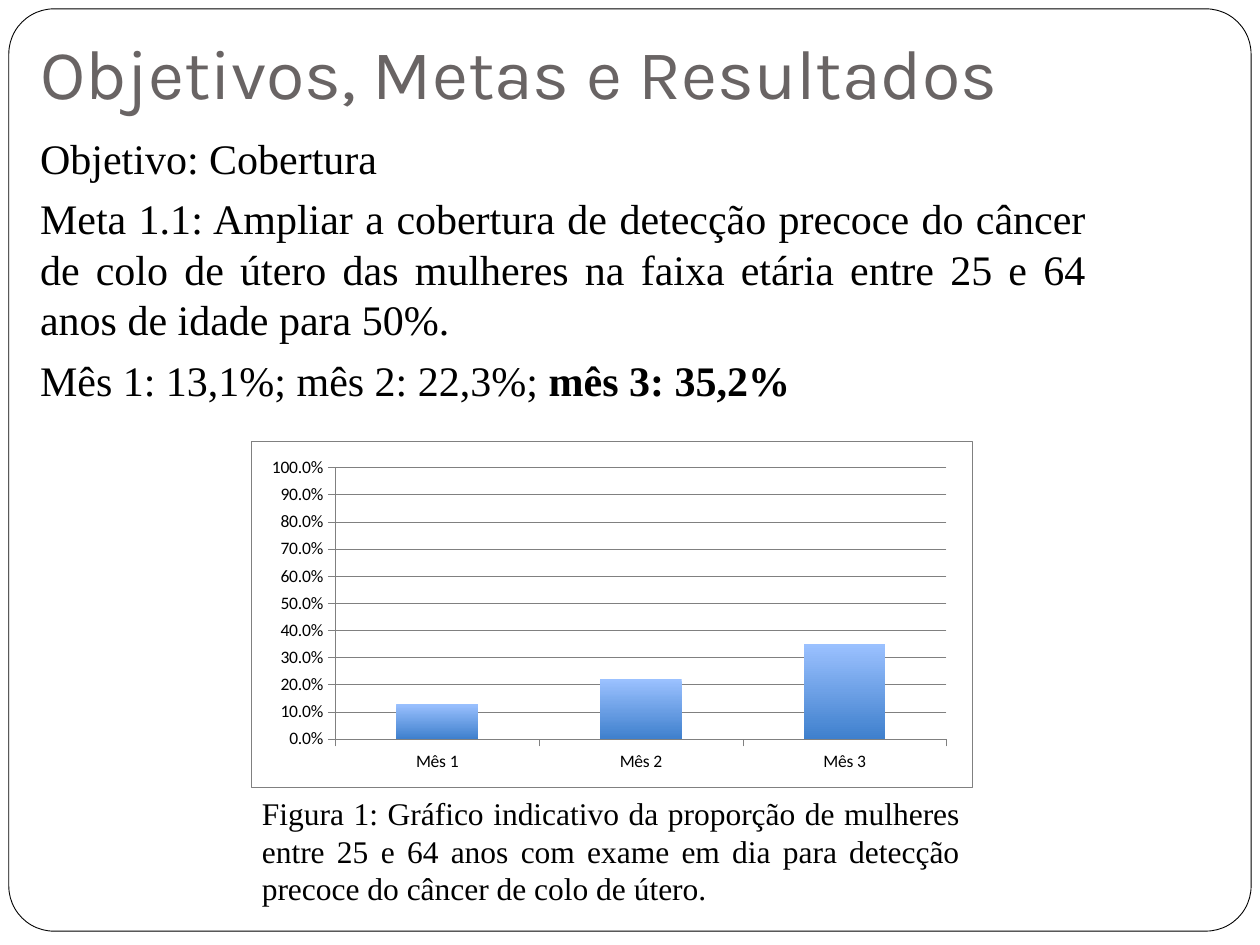
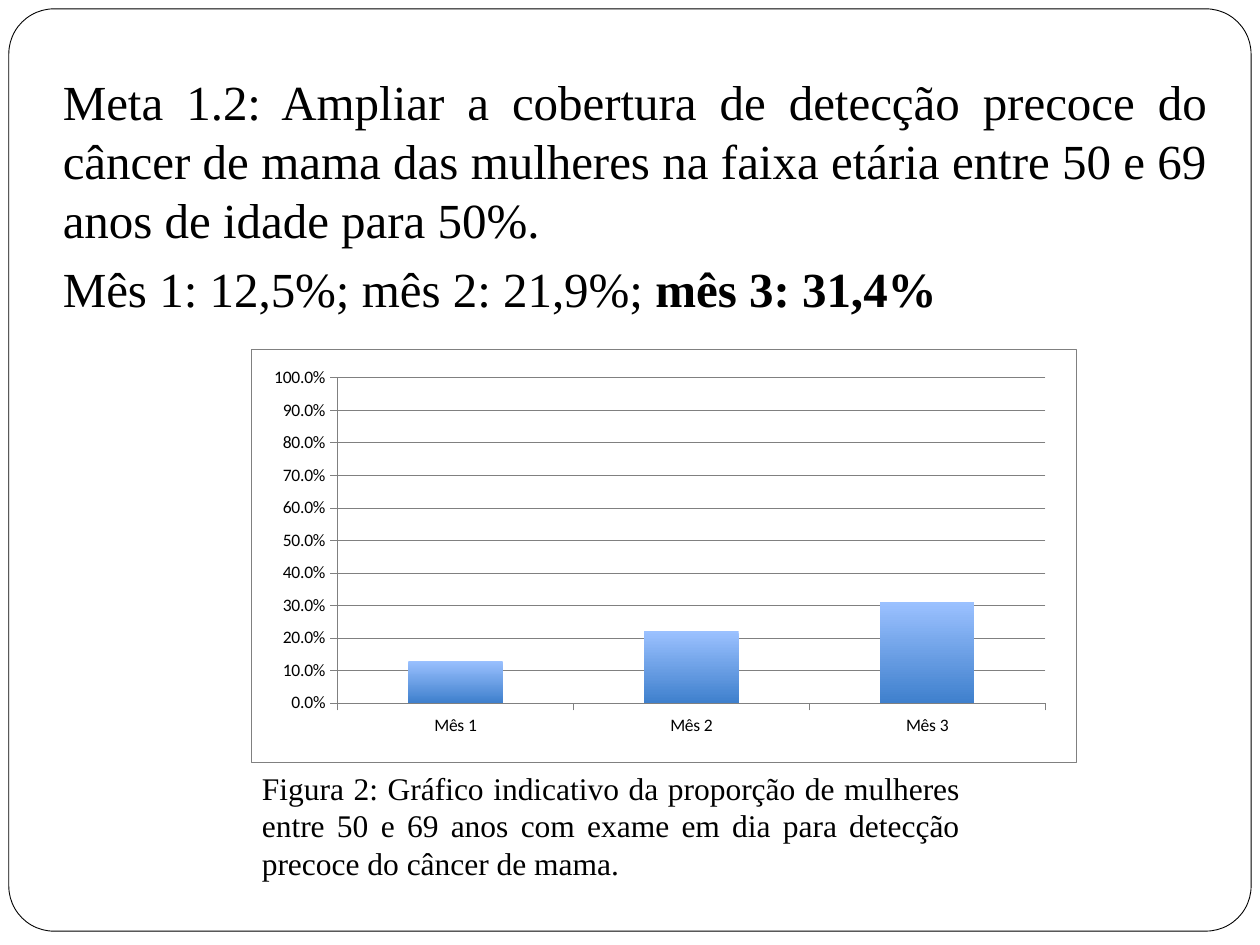
from dataclasses import dataclass
from lxml import etree
from pptx import Presentation
from pptx import util as u
from pptx.chart import data as chart_data
from pptx.dml.color import RGBColor
from pptx.enum import chart as charts, shapes, text
from pptx.oxml import parse_xml
from pptx.oxml.ns import nsdecls, qn


@dataclass(frozen=True)
class Theme:
    paper: str = "FFFFFF"
    ink: str = "000000"
    heading: str = "696464"
    rule: str = "808080"
    bar_top: str = "9BC1FF"
    bar_bottom: str = "3F80CD"
    title_font: str = "Karla"
    body_font: str = "Times New Roman"
    chart_font: str = "Calibri"
    title_size: float = 40
    goal_size: float = 24
    large_goal_size: float = 28
    caption_size: float = 18
    chart_size: float = 10
    goal_gap: float = 5.8
    hairline: float = 0.25
    frame_line: float = 0.5


MONTHS = ["Mês 1", "Mês 2", "Mês 3"]


def rgb(value):
    return RGBColor.from_string(value)


def apply(target, values):
    for name, value in values.items():
        setattr(target, name, value)


class Deck:
    def __init__(self, theme):
        self.theme = theme
        self.presentation = Presentation()
        apply(self.presentation, {"slide_width": u.Inches(10), "slide_height": u.Inches(7.5)})

    def new_slide(self):
        self.slide = self.presentation.slides.add_slide(self.presentation.slide_layouts[6])
        frame = self.slide.shapes.add_shape(
            shapes.MSO_SHAPE.ROUNDED_RECTANGLE, *map(u.Inches, (0.07, 0.07, 9.86, 7.32)))
        frame.adjustments[0] = 0.049
        frame.shadow.inherit = False
        frame.fill.solid()
        frame.fill.fore_color.rgb = rgb(self.theme.paper)
        self.line(frame.line, self.theme.ink, self.theme.frame_line)

    def line(self, line, color, width):
        line.color.rgb = rgb(color)
        line.width = u.Pt(width)

    def font(self, font, name, size, color, bold=False):
        apply(font, {"name": name, "size": u.Pt(size), "bold": bold})
        font.color.rgb = rgb(color)

    def text_box(self, box, paragraphs, name, size, color, gap=0,
                 alignment=text.PP_ALIGN.JUSTIFY, **frame_format):
        frame = self.slide.shapes.add_textbox(*map(u.Inches, box)).text_frame
        apply(frame, {"word_wrap": True, **frame_format})
        for index, runs in enumerate(paragraphs):
            paragraph = frame.add_paragraph() if index else frame.paragraphs[0]
            apply(paragraph, {"space_before": u.Pt(gap), "alignment": alignment})
            for words, bold in runs:
                run = paragraph.add_run()
                run.text = words
                self.font(run.font, name, size, color, bold)

    def title(self, words):
        self.text_box((0.22, -0.25, 8.5, 1.25), [[(words, False)]], self.theme.title_font,
                      self.theme.title_size, self.theme.heading, alignment=text.PP_ALIGN.LEFT,
                      vertical_anchor=text.MSO_ANCHOR.BOTTOM, margin_bottom=u.Inches(0.1))

    def goals(self, box, statements, earlier_months, last_month, size):
        paragraphs = [[(statement, False)] for statement in statements]
        paragraphs.append([(earlier_months, False), (last_month, True)])
        self.text_box(box, paragraphs, self.theme.body_font, size, self.theme.ink,
                      self.theme.goal_gap)

    def caption(self, top, words):
        self.text_box((1.98, top, 5.74, 1.31), [[(words, False)]], self.theme.body_font,
                      self.theme.caption_size, self.theme.ink)

    def area_format(self, border=None):
        outline = "<a:ln><a:noFill/></a:ln>"
        if border:
            outline = (f'<a:ln w="{u.Pt(self.theme.hairline)}"><a:solidFill>'
                       f'<a:srgbClr val="{border}"/></a:solidFill></a:ln>')
        return parse_xml(f'<c:spPr {nsdecls("c", "a")}><a:solidFill><a:srgbClr '
                         f'val="{self.theme.paper}"/></a:solidFill>{outline}</c:spPr>')

    def place_plot(self, plot_area, plot_box):
        for old in plot_area.findall(qn("c:layout")):
            plot_area.remove(old)
        layout = parse_xml(f'<c:layout {nsdecls("c")}><c:manualLayout/></c:layout>')
        settings = [("layoutTarget", "inner"), ("xMode", "edge"), ("yMode", "edge"),
                    *zip("xywh", plot_box)]
        for name, value in settings:
            etree.SubElement(layout[0], qn(f"c:{name}")).set("val", str(value))
        plot_area.insert(0, layout)

    def coverage_chart(self, box, plot_box, coverage):
        theme = self.theme
        data = chart_data.CategoryChartData(number_format="0.0%")
        data.categories = MONTHS
        data.add_series("Series 1", coverage)
        chart = self.slide.shapes.add_chart(
            charts.XL_CHART_TYPE.COLUMN_CLUSTERED, *map(u.Inches, box), data).chart
        apply(chart, {"has_legend": False, "has_title": False})
        self.font(chart.font, theme.chart_font, theme.chart_size, theme.ink)

        months, percent = chart.category_axis, chart.value_axis
        apply(percent, {"minimum_scale": 0, "maximum_scale": 1, "major_unit": 0.1,
                        "has_major_gridlines": True})
        apply(percent.tick_labels, {"number_format": "0.0%", "number_format_is_linked": False})
        for axis in (months, percent):
            apply(axis, {"major_tick_mark": charts.XL_TICK_MARK.OUTSIDE,
                         "minor_tick_mark": charts.XL_TICK_MARK.NONE})
            self.font(axis.tick_labels.font, theme.chart_font, theme.chart_size, theme.ink)
        for ruled in (months, percent, percent.major_gridlines):
            self.line(ruled.format.line, theme.rule, theme.hairline)

        apply(chart.plots[0], {"gap_width": 150, "vary_by_categories": False})
        bar_fill = chart.plots[0].series[0].format.fill
        bar_fill.gradient()
        bar_fill.gradient_angle = 270
        for stop, color in zip(bar_fill.gradient_stops, (theme.bar_top, theme.bar_bottom)):
            stop.color.rgb = rgb(color)

        root = chart.element
        plot_area = root.find(qn("c:chart")).find(qn("c:plotArea"))
        self.place_plot(plot_area, plot_box)
        plot_area.append(self.area_format())
        root.find(qn("c:chart")).addnext(self.area_format(theme.rule))


def main():
    theme = Theme()
    deck = Deck(theme)

    deck.new_slide()
    deck.title("Objetivos, Metas e Resultados")
    deck.goals((0.22, 1, 8.5, 5),
               ["Objetivo: Cobertura",
                "Meta 1.1: Ampliar a cobertura de detecção precoce do câncer de colo de útero "
                "das mulheres na faixa etária entre 25 e 64 anos de idade para 50%."],
               "Mês 1: 13,1%; mês 2: 22,3%; ", "mês 3: 35,2%", theme.goal_size)
    deck.coverage_chart((1.99, 3.5, 5.73, 2.75), (0.117, 0.076, 0.847, 0.785),
                        (0.13, 0.22, 0.35))
    deck.caption(6.25, "Figura 1: Gráfico indicativo da proporção de mulheres entre 25 e 64 anos "
                       "com exame em dia para detecção precoce do câncer de colo de útero.")

    deck.new_slide()
    deck.goals((0.4, 0.52, 9.28, 5),
               ["Meta 1.2: Ampliar a cobertura de detecção precoce do câncer de mama "
                "das mulheres na faixa etária entre 50 e 69 anos de idade para 50%. "],
               "Mês 1: 12,5%; mês 2: 21,9%; ", "mês 3: 31,4%", theme.large_goal_size)
    deck.caption(6.05, "Figura 2: Gráfico indicativo da proporção de mulheres entre 50 e 69 anos "
                       "com exame em dia para detecção precoce do câncer de mama.")
    deck.coverage_chart((1.99, 2.77, 6.55, 3.28), (0.105, 0.069, 0.858, 0.788),
                        (0.13, 0.22, 0.31))

    deck.presentation.save("out.pptx")


if __name__ == "__main__":
    main()
